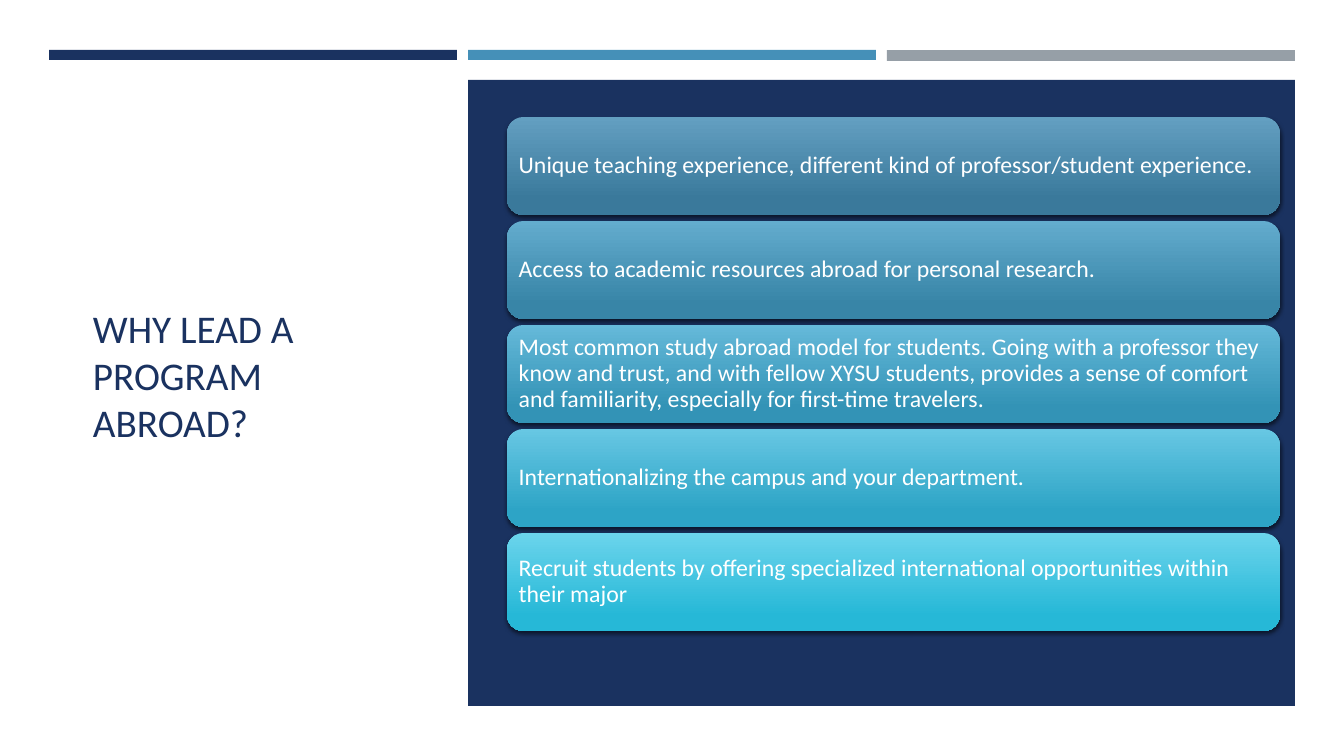
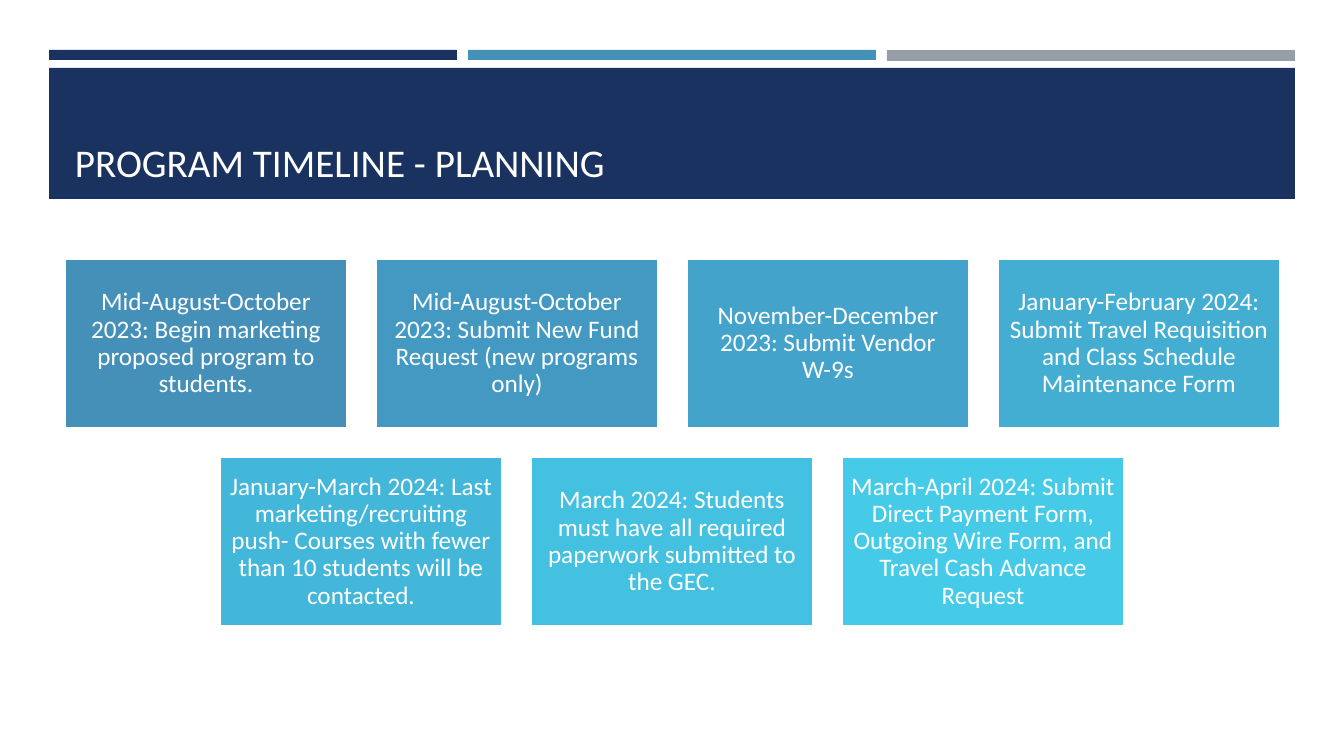
from dataclasses import dataclass
from typing import Any

import lxml.etree
import pptx
import pptx.dml.color
import pptx.enum.shapes
import pptx.enum.text
import pptx.oxml.ns
import pptx.util

Shapes = pptx.enum.shapes.MSO_SHAPE
Anchor = pptx.enum.text.MSO_ANCHOR
Align = pptx.enum.text.PP_ALIGN

EMU_PER_PX = 914400 / 100.8
SLIDE_WIDTH, SLIDE_HEIGHT = 1344, 756


@dataclass(frozen=True)
class Theme:
    font: str = "Calibri"
    navy: str = "1A3260"
    blue: str = "4590B8"
    gray: str = "969FA7"
    white: str = "FFFFFF"
    title_white: str = "FFFEFF"
    shadow: str = "000000"
    title_size: int = 28
    reason_size: int = 17
    step_size: int = 18
    line_spacing: float = 0.9


THEME = Theme()


@dataclass(frozen=True)
class Box:
    left: int
    top: int
    width: int
    height: int

    def emu(self) -> tuple[int, ...]:
        return tuple(px(value) for value in (self.left, self.top, self.width, self.height))


@dataclass(frozen=True)
class TextStyle:
    size: int
    color: str
    anchor: Any
    align: Any = Align.LEFT
    spacing: float = 1.0
    inset_x: int = 10
    inset_y: int = 5


@dataclass(frozen=True)
class Reason:
    text: str
    top_color: str
    bottom_color: str


@dataclass(frozen=True)
class Step:
    text: str
    color: str


REASONS = (
    Reason("Unique teaching experience, different kind of professor/student experience.",
           "639FC1", "3A799B"),
    Reason("Access to academic resources abroad for personal research.", "63ACCE", "3885A7"),
    Reason("Most common study abroad model for students. Going with a professor they know "
           "and trust, and with fellow XYSU students, provides a sense of comfort and "
           "familiarity, especially for first-time travelers.", "65B9D9", "3393B6"),
    Reason("Internationalizing the campus and your department.", "67C7E3", "2DA4C6"),
    Reason("Recruit students by offering specialized international opportunities within "
           "their major", "6BD4EC", "26B8D7"),
)

STEP_ROWS = (
    (
        Step("Mid-August-October 2023: Begin marketing proposed program to students.", "4590B8"),
        Step("Mid-August-October 2023: Submit New Fund Request (new programs only)", "4399C2"),
        Step("November-December 2023: Submit Vendor W-9s", "43A3CA"),
        Step("January-February 2024: Submit Travel Requisition and Class Schedule "
             "Maintenance Form", "43ADD2"),
    ),
    (
        Step("January-March 2024: Last marketing/recruiting push- Courses with fewer than "
             "10 students will be contacted.", "43B7DA"),
        Step("March 2024: Students must have all required paperwork submitted to the GEC.",
             "44C1E1"),
        Step("March-April 2024: Submit Direct Payment Form, Outgoing Wire Form, and Travel "
             "Cash Advance Request", "45CBE8"),
    ),
)

REASON_STYLE = TextStyle(THEME.reason_size, THEME.white, Anchor.MIDDLE,
                         spacing=THEME.line_spacing, inset_x=7, inset_y=7)
STEP_STYLE = TextStyle(THEME.step_size, THEME.white, Anchor.MIDDLE, Align.CENTER,
                       THEME.line_spacing, inset_x=7, inset_y=7)


def px(value: int) -> int:
    return round(value * EMU_PER_PX)


def rgb(color: str) -> pptx.dml.color.RGBColor:
    return pptx.dml.color.RGBColor.from_string(color)


def write_text(shape: Any, text: str, style: TextStyle) -> None:
    frame = shape.text_frame
    frame.word_wrap = True
    frame.vertical_anchor = style.anchor
    frame.margin_left = frame.margin_right = px(style.inset_x)
    frame.margin_top = frame.margin_bottom = px(style.inset_y)
    frame.text = text
    for paragraph in frame.paragraphs:
        paragraph.alignment = style.align
        paragraph.line_spacing = style.spacing
        for run in paragraph.runs:
            run.font.name = THEME.font
            run.font.size = pptx.util.Pt(style.size)
            run.font.color.rgb = rgb(style.color)


def add_block(slide: Any, box: Box, color: str, kind: Any = Shapes.RECTANGLE) -> Any:
    """Add a flat, borderless shape without a shadow."""
    shape = slide.shapes.add_shape(kind, *box.emu())
    shape.shadow.inherit = False
    shape.fill.solid()
    shape.fill.fore_color.rgb = rgb(color)
    shape.line.fill.background()
    return shape


def add_drop_shadow(shape: Any) -> None:
    effects = shape.element.spPr.find(pptx.oxml.ns.qn("a:effectLst"))
    shadow = lxml.etree.SubElement(
        effects, pptx.oxml.ns.qn("a:outerShdw"), blurRad=str(pptx.util.Pt(3)),
        dist=str(pptx.util.Pt(2)), dir="5400000", algn="ctr", rotWithShape="0")
    color = lxml.etree.SubElement(shadow, pptx.oxml.ns.qn("a:srgbClr"), val=THEME.shadow)
    lxml.etree.SubElement(color, pptx.oxml.ns.qn("a:alpha"), val="55000")


def add_title(slide: Any, text: str, box: Box, color: str, anchor: Any) -> None:
    title = slide.shapes.add_textbox(*box.emu())
    write_text(title, text, TextStyle(THEME.title_size, color, anchor))


def add_slide(presentation: Any) -> Any:
    """Add a blank slide with the three bars that every slide carries."""
    slide = presentation.slides.add_slide(presentation.slide_layouts[6])
    slide.background.fill.solid()
    slide.background.fill.fore_color.rgb = rgb(THEME.white)
    for index, color in enumerate((THEME.navy, THEME.blue, THEME.gray)):
        add_block(slide, Box(49 + index * 419, 50, 408, 11 if color == THEME.gray else 10), color)
    return slide


def add_reason(slide: Any, reason: Reason, box: Box) -> None:
    card = add_block(slide, box, reason.top_color, Shapes.ROUNDED_RECTANGLE)
    card.fill.gradient()
    card.fill.gradient_angle = 270
    first, last = card.fill.gradient_stops
    first.position, last.position = 0, 0.84
    first.color.rgb = rgb(reason.top_color)
    last.color.rgb = rgb(reason.bottom_color)
    add_drop_shadow(card)
    write_text(card, reason.text, REASON_STYLE)


def add_step(slide: Any, step: Step, box: Box) -> None:
    card = add_block(slide, box, step.color)
    card.line.color.rgb = rgb(THEME.white)
    card.line.width = pptx.util.Pt(1.75)
    write_text(card, step.text, STEP_STYLE)


def build_reasons_slide(presentation: Any) -> None:
    slide = add_slide(presentation)
    add_title(slide, "WHY LEAD A PROGRAM ABROAD?", Box(83, 115, 337, 519),
              THEME.navy, Anchor.MIDDLE)
    add_block(slide, Box(468, 80, 827, 626), THEME.navy)
    for index, reason in enumerate(REASONS):
        add_reason(slide, reason, Box(507, 117 + index * 104, 773, 98))


def build_timeline_slide(presentation: Any) -> None:
    slide = add_slide(presentation)
    add_block(slide, Box(49, 68, 1246, 131), THEME.navy)
    add_title(slide, "PROGRAM TIMELINE - PLANNING", Box(65, 78, 1215, 112),
              THEME.title_white, Anchor.BOTTOM)
    width, height, gap, top = 282, 169, 29, 259
    for row, steps in enumerate(STEP_ROWS):
        row_width = len(steps) * (width + gap) - gap
        left = (SLIDE_WIDTH - row_width + 1) // 2
        for column, step in enumerate(steps):
            add_step(slide, step, Box(left + column * (width + gap),
                                      top + row * (height + gap), width, height))


def main() -> None:
    presentation = pptx.Presentation()
    presentation.slide_width = px(SLIDE_WIDTH)
    presentation.slide_height = px(SLIDE_HEIGHT)
    build_reasons_slide(presentation)
    build_timeline_slide(presentation)
    presentation.save("out.pptx")


if __name__ == "__main__":
    main()
